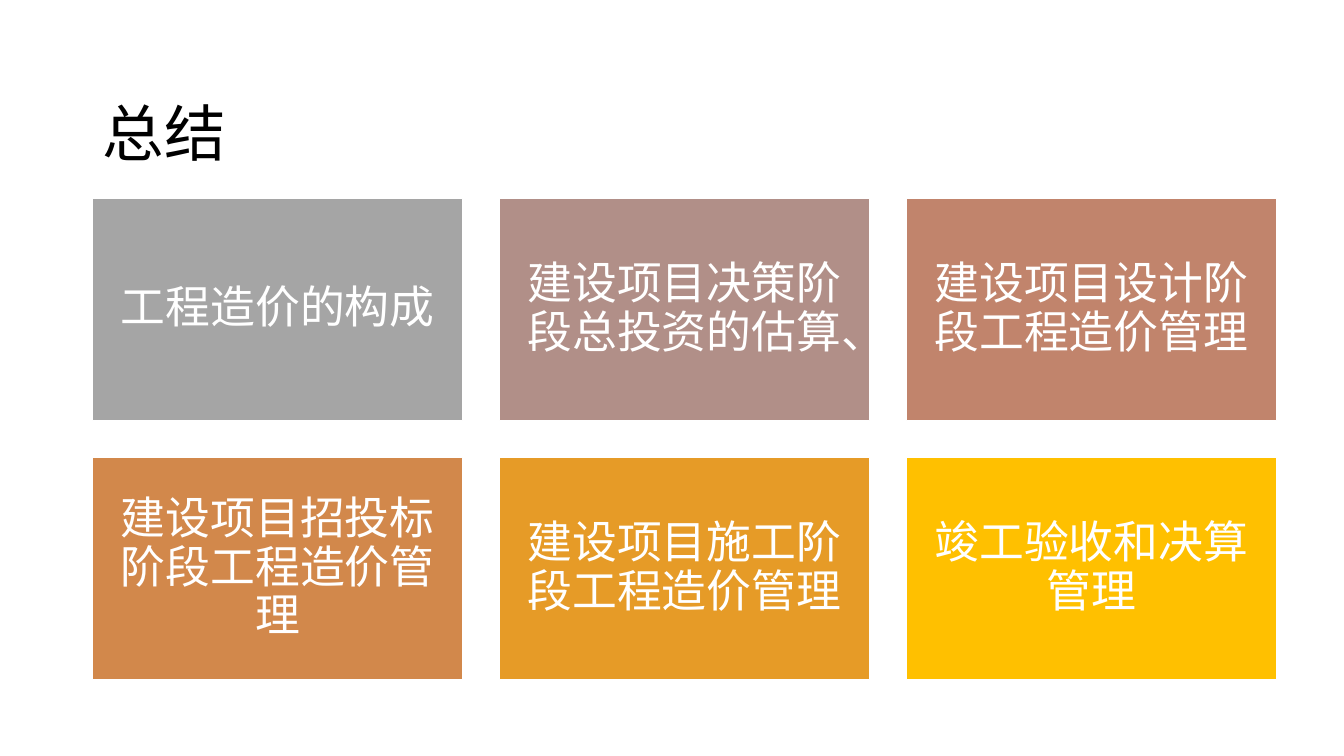
import dataclasses

import lxml.etree
import pptx
import pptx.dml.color
import pptx.enum.shapes
import pptx.enum.text
import pptx.oxml.ns
import pptx.util

RGBColor = pptx.dml.color.RGBColor
BLACK = RGBColor(0x00, 0x00, 0x00)
WHITE = RGBColor(0xFF, 0xFF, 0xFF)
GRAY = RGBColor(0xA5, 0xA5, 0xA5)
MAUVE = RGBColor(0xB1, 0x8F, 0x88)
CLAY = RGBColor(0xC1, 0x84, 0x6C)
COPPER = RGBColor(0xD2, 0x88, 0x4B)
AMBER = RGBColor(0xE6, 0x9B, 0x27)
GOLD = RGBColor(0xFF, 0xC0, 0x00)

SLIDE_WIDTH, SLIDE_HEIGHT = 13.33, 7.5
GRID_LEFT, GRID_TOP = 0.92, 1.97
TILE_WIDTH, TILE_HEIGHT = 3.67, 2.2
COLUMN_STEP, ROW_STEP = 4.035, 2.57
COLUMN_COUNT = 3
CHINESE_FONT = "Noto Sans CJK JP"
TITLE_FONT = "Times New Roman"


@dataclasses.dataclass(frozen=True)
class Topic:
    text: str
    color: RGBColor


TOPICS = [
    Topic("工程造价的构成", GRAY),
    Topic("建设项目决策阶段总投资的估算、", MAUVE),
    Topic("建设项目设计阶段工程造价管理", CLAY),
    Topic("建设项目招投标阶段工程造价管理", COPPER),
    Topic("建设项目施工阶段工程造价管理", AMBER),
    Topic("竣工验收和决算管理", GOLD),
]


def write_text(
    box,
    text: str,
    *,
    size: float,
    color: RGBColor,
    font: str,
    align: pptx.enum.text.PP_ALIGN,
    line_spacing: float,
    side_margin: float,
    end_margin: float,
) -> None:
    frame = box.text_frame
    frame.word_wrap = True
    frame.vertical_anchor = pptx.enum.text.MSO_ANCHOR.MIDDLE
    frame.margin_left = frame.margin_right = pptx.util.Inches(side_margin)
    frame.margin_top = frame.margin_bottom = pptx.util.Inches(end_margin)
    para = frame.paragraphs[0]
    para.alignment = align
    para.line_spacing = line_spacing
    span = para.add_run()
    span.text = text
    span.font.size = pptx.util.Pt(size)
    span.font.color.rgb = color
    span.font.name = font
    properties = span.font._element
    properties.set("lang", "zh-CN")
    east_asian = lxml.etree.SubElement(properties, pptx.oxml.ns.qn("a:ea"))
    east_asian.set("typeface", CHINESE_FONT)


def draw_title(page, text: str) -> None:
    box = page.shapes.add_textbox(
        *map(pptx.util.Inches, (GRID_LEFT, 0.4, 11.5, 1.45))
    )
    write_text(
        box,
        text,
        size=44,
        color=BLACK,
        font=TITLE_FONT,
        align=pptx.enum.text.PP_ALIGN.LEFT,
        line_spacing=1.5,
        side_margin=0.1,
        end_margin=0.05,
    )


def draw_tile(page, topic: Topic, column: int, row: int) -> None:
    left = GRID_LEFT + column * COLUMN_STEP
    top = GRID_TOP + row * ROW_STEP
    box = page.shapes.add_shape(
        pptx.enum.shapes.MSO_SHAPE.RECTANGLE,
        *map(pptx.util.Inches, (left, top, TILE_WIDTH, TILE_HEIGHT)),
    )
    box.shadow.inherit = False
    box.fill.solid()
    box.fill.fore_color.rgb = topic.color
    box.line.color.rgb = WHITE
    box.line.width = pptx.util.Pt(1)
    write_text(
        box,
        topic.text,
        size=32,
        color=WHITE,
        font=CHINESE_FONT,
        align=pptx.enum.text.PP_ALIGN.CENTER,
        line_spacing=0.9,
        side_margin=0.13,
        end_margin=0.13,
    )


def main() -> None:
    deck = pptx.Presentation()
    deck.slide_width = pptx.util.Inches(SLIDE_WIDTH)
    deck.slide_height = pptx.util.Inches(SLIDE_HEIGHT)
    page = deck.slides.add_slide(deck.slide_layouts[6])
    draw_title(page, "总结")
    for index, topic in enumerate(TOPICS):
        row, column = divmod(index, COLUMN_COUNT)
        draw_tile(page, topic, column, row)
    deck.save("out.pptx")


if __name__ == "__main__":
    main()
